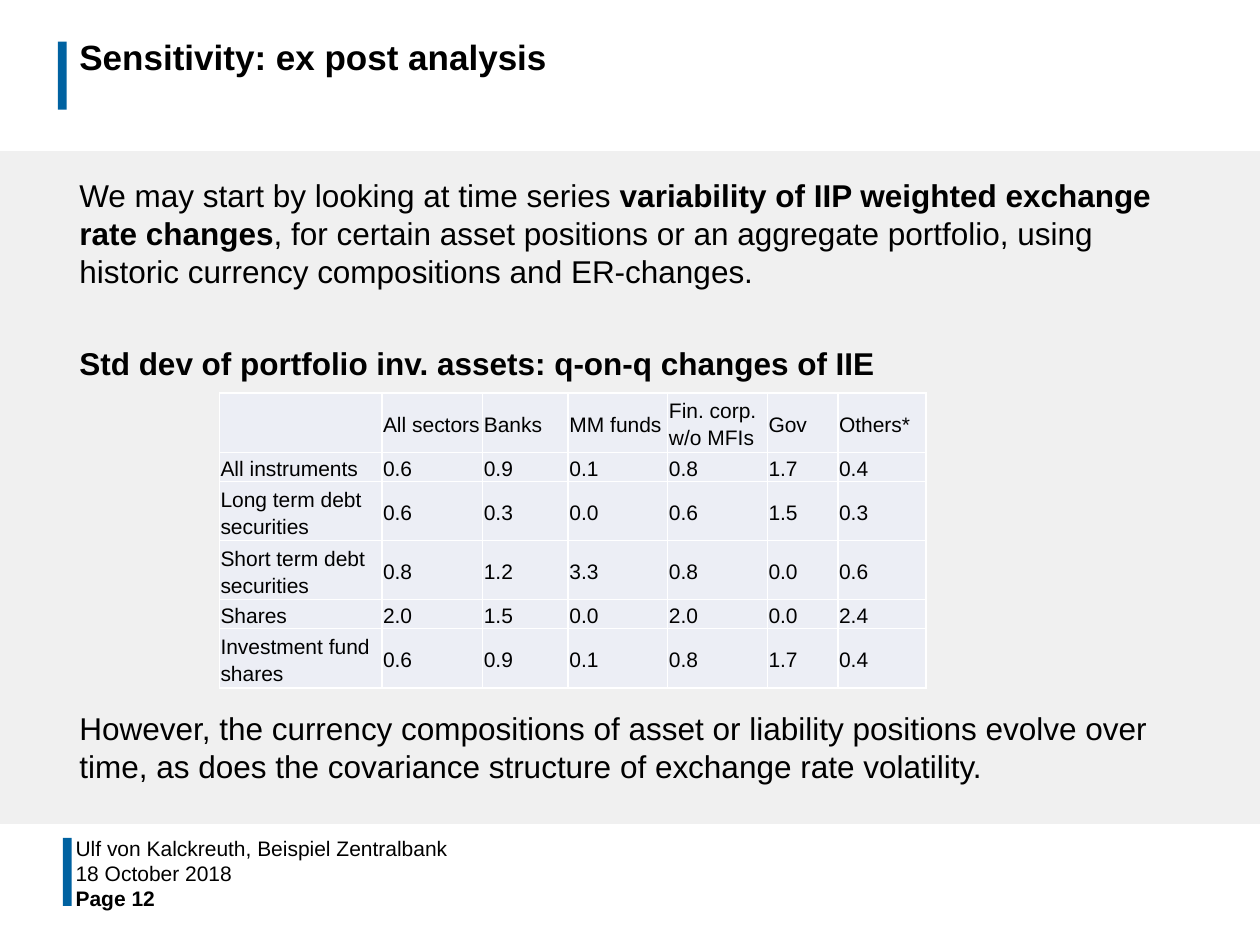
from lxml import etree
from pptx import Presentation
from pptx.dml.color import RGBColor
from pptx.enum.shapes import MSO_SHAPE
from pptx.enum.text import MSO_ANCHOR, MSO_AUTO_SIZE, PP_ALIGN
from pptx.oxml.ns import qn
from pptx.util import Inches, Pt

RECTANGLE = MSO_SHAPE.RECTANGLE
TOP, MIDDLE = MSO_ANCHOR.TOP, MSO_ANCHOR.MIDDLE
LEFT = PP_ALIGN.LEFT
NO_FIT = MSO_AUTO_SIZE.NONE
FONT = "Arial"
BLACK, WHITE, BLUE = "000000", "FFFFFF", "0062A1"
PANEL_GREY, CELL_FILL = "F0F0F0", "ECEEF5"

# Content
TITLE = "Sensitivity: ex post analysis"
# Each paragraph: space before in points, then (text, bold) runs
BODY = [
    (4.4, [("We may start by looking at time series ", False),
           ("variability of IIP weighted exchange rate changes", True),
           (", for certain asset positions or an aggregate portfolio, using "
            "historic currency compositions and ER-changes.", False)]),
    (31, [("Std dev of portfolio inv. assets: q-on-q changes of IIE", True)]),
    (187, [("However, the currency compositions of asset or liability positions "
            "evolve over time, as does the covariance structure of exchange "
            "rate volatility.", False)]),
]
DEVIATIONS = [
    ("", "All sectors", "Banks", "MM funds", "Fin. corp. w/o MFIs", "Gov", "Others*"),
    ("All instruments", "0.6", "0.9", "0.1", "0.8", "1.7", "0.4"),
    ("Long term debt securities", "0.6", "0.3", "0.0", "0.6", "1.5", "0.3"),
    ("Short term debt securities", "0.8", "1.2", "3.3", "0.8", "0.0", "0.6"),
    ("Shares", "2.0", "1.5", "0.0", "2.0", "0.0", "2.4"),
    ("Investment fund shares", "0.6", "0.9", "0.1", "0.8", "1.7", "0.4"),
]
COLUMN_WIDTHS = [1.29, 0.8, 0.68, 0.79, 0.79, 0.56, 0.7]
ROW_HEIGHTS = [0.47, 0.23, 0.47, 0.47, 0.23, 0.47]
FOOTER = [("Ulf von Kalckreuth, Beispiel Zentralbank", False),
          ("18 October 2018", False),
          ("Page 12", True)]
BACKDROP = [((0, 1.2, 10, 5.34), PANEL_GREY),
            ((0.46, 0.33, 0.07, 0.54), BLUE),
            ((0.5, 6.65, 0.07, 0.54), BLUE)]


def color(hex_value):
    return RGBColor.from_string(hex_value)


def place(shape, *box):
    for side, inches in zip(("left", "top", "width", "height"), box):
        setattr(shape, side, Inches(inches))


def format_frame(frame, anchor, inset_x, inset_y):
    settings = {"word_wrap": True, "auto_size": NO_FIT, "vertical_anchor": anchor,
                "margin_left": Inches(inset_x), "margin_right": Inches(inset_x),
                "margin_top": Inches(inset_y), "margin_bottom": Inches(inset_y)}
    for name, value in settings.items():
        setattr(frame, name, value)


def add_run(paragraph, text, size, bold=False):
    run = paragraph.add_run()
    run.text = text
    for name, value in {"name": FONT, "size": Pt(size), "bold": bold}.items():
        setattr(run.font, name, value)
    run.font.color.rgb = color(BLACK)
    paragraph.alignment = LEFT


def remove_bullet(paragraph):
    properties = paragraph._p.get_or_add_pPr()
    properties.set("marL", "0")
    properties.set("indent", "0")
    etree.SubElement(properties, qn("a:buNone"))


def set_borders(cell, hex_value, points):
    properties = cell._tc.get_or_add_tcPr()
    for index, side in enumerate(("lnL", "lnR", "lnT", "lnB")):
        line = etree.Element(qn(f"a:{side}"), w=str(Pt(points)))
        fill = etree.SubElement(line, qn("a:solidFill"))
        etree.SubElement(fill, qn("a:srgbClr"), val=hex_value)
        properties.insert(index, line)


def add_backdrop(slide):
    for box, fill in BACKDROP:
        bar = slide.shapes.add_shape(RECTANGLE, *map(Inches, box))
        bar.shadow.inherit = False
        bar.fill.solid()
        bar.fill.fore_color.rgb = color(fill)
        bar.line.fill.background()
        slide.shapes.title.element.addprevious(bar.element)


def fill_title(title):
    place(title, 0.53, 0.28, 8.87, 0.71)
    format_frame(title.text_frame, TOP, 0.1, 0.05)
    heading = title.text_frame.paragraphs[0]
    heading.line_spacing = Pt(20.4)
    add_run(heading, TITLE, 20, True)


def fill_body(body):
    place(body, 0.53, 1.35, 8.77, 5.15)
    frame = body.text_frame
    format_frame(frame, TOP, 0.1, 0.05)
    for index, (space_before, runs) in enumerate(BODY):
        paragraph = frame.add_paragraph() if index else frame.paragraphs[0]
        paragraph.space_before = Pt(space_before)
        remove_bullet(paragraph)
        for text, bold in runs:
            add_run(paragraph, text, 18, bold)


def add_footer(slide):
    for index, (text, bold) in enumerate(FOOTER):
        box = (0.51, 6.64 + 0.2 * index, 8.88, 0.18)
        line = slide.shapes.add_textbox(*map(Inches, box))
        format_frame(line.text_frame, MIDDLE, 0.09, 0.04)
        add_run(line.text_frame.paragraphs[0], text, 12, bold)


def add_deviation_table(slide):
    box = (1.74, 3.12, sum(COLUMN_WIDTHS), sum(ROW_HEIGHTS))
    table = slide.shapes.add_table(len(DEVIATIONS), len(COLUMN_WIDTHS),
                                   *map(Inches, box)).table
    table.first_row = table.horz_banding = False
    for column, width in zip(table.columns, COLUMN_WIDTHS):
        column.width = Inches(width)
    for row, height, texts in zip(table.rows, ROW_HEIGHTS, DEVIATIONS):
        row.height = Inches(height)
        for cell, text in zip(row.cells, texts):
            cell.vertical_anchor = MIDDLE
            cell.margin_left = cell.margin_right = cell.margin_top = Inches(0.01)
            cell.margin_bottom = 0
            cell.fill.solid()
            cell.fill.fore_color.rgb = color(CELL_FILL)
            set_borders(cell, WHITE, 1)
            if text:
                entry = cell.text_frame.paragraphs[0]
                entry.line_spacing = 1.15
                add_run(entry, text, 12)


def main():
    prs = Presentation()
    prs.slide_width, prs.slide_height = Inches(10), Inches(7.5)
    slide = prs.slides.add_slide(prs.slide_layouts[1])
    add_backdrop(slide)
    fill_title(slide.shapes.title)
    fill_body(slide.placeholders[1])
    add_footer(slide)
    add_deviation_table(slide)
    prs.save("out.pptx")


if __name__ == "__main__":
    main()
